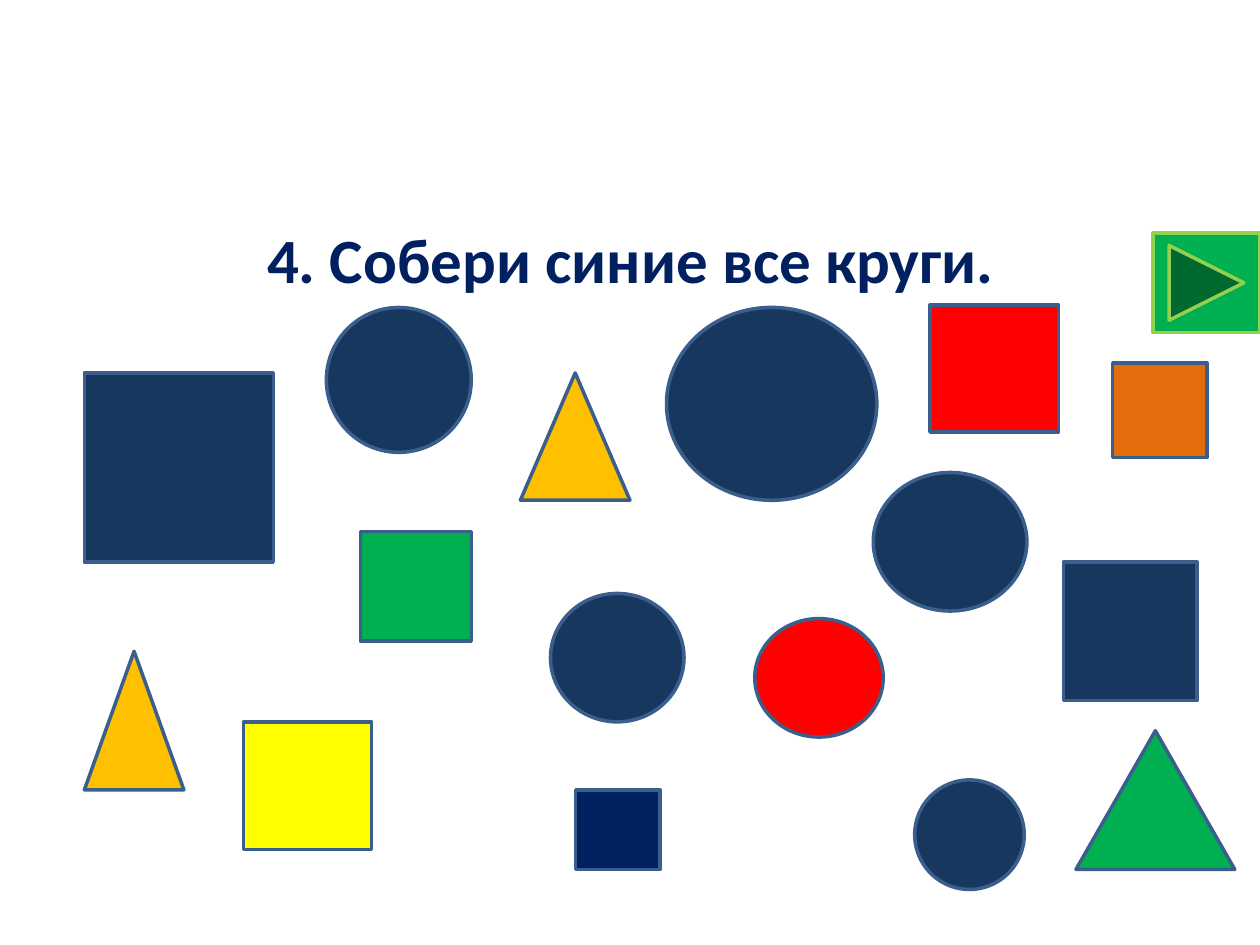
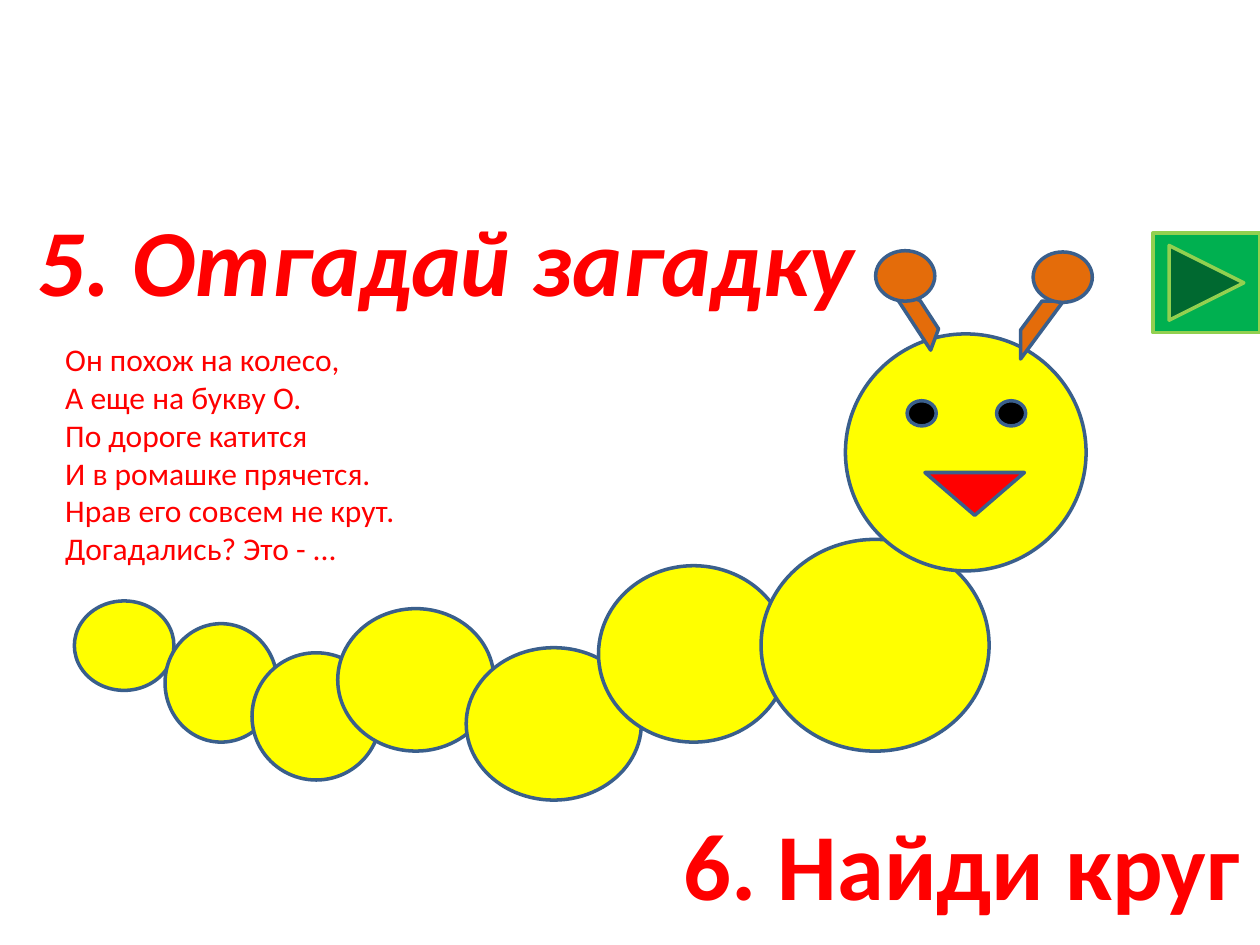
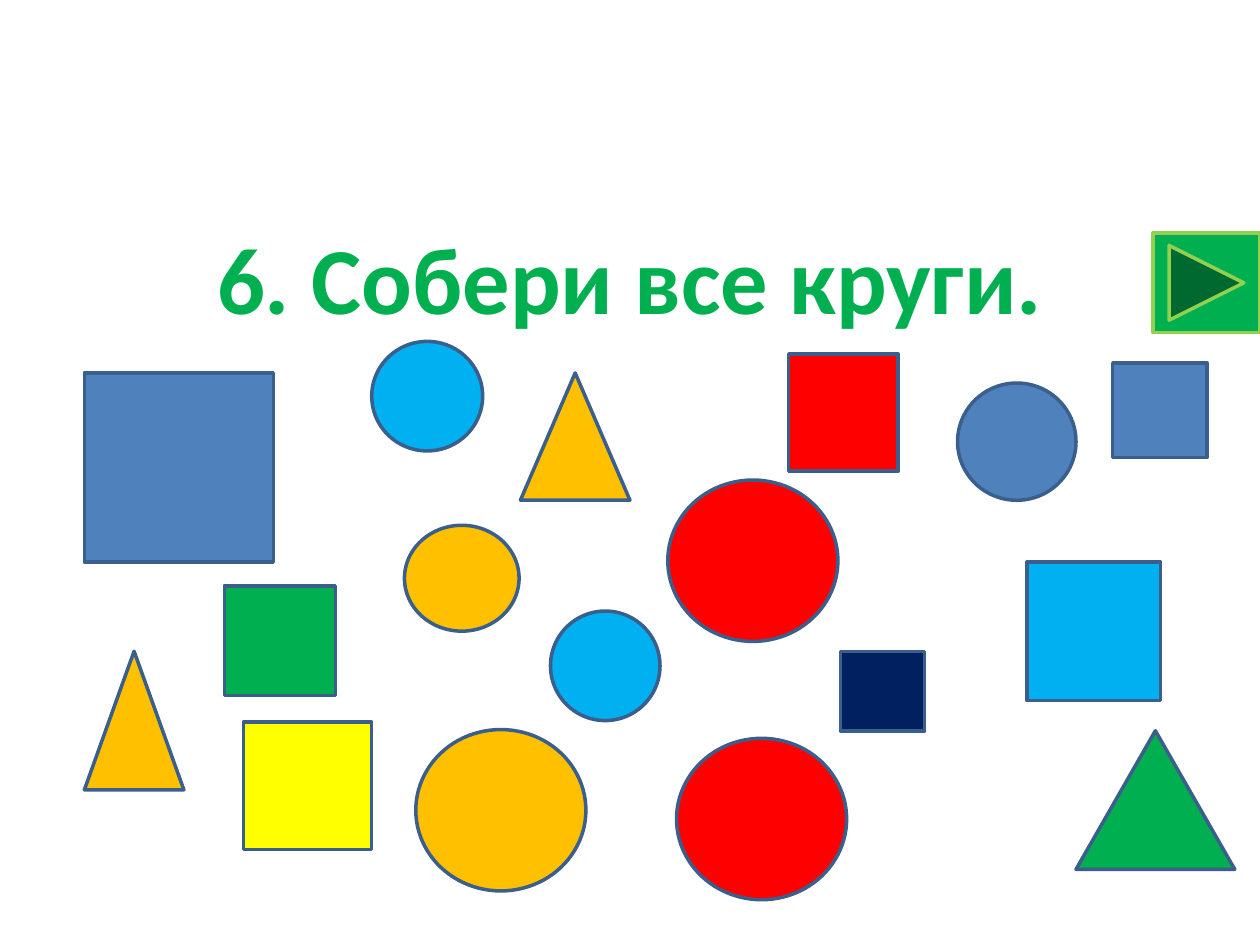
from pptx import Presentation
from pptx.dml.color import RGBColor
from pptx.enum.shapes import MSO_SHAPE
from pptx.enum.text import MSO_AUTO_SIZE, PP_ALIGN
from pptx.util import Pt

SQUARE = MSO_SHAPE.ACTION_BUTTON_CUSTOM
NEXT_BUTTON = MSO_SHAPE.ACTION_BUTTON_FORWARD_OR_NEXT
CIRCLE = MSO_SHAPE.OVAL
TRIANGLE = MSO_SHAPE.ISOSCELES_TRIANGLE
STRIPE = MSO_SHAPE.DIAGONAL_STRIPE
GROW = MSO_AUTO_SIZE.SHAPE_TO_FIT_TEXT
LEFT, CENTER = PP_ALIGN.LEFT, PP_ALIGN.CENTER

BLACK = RGBColor(0x00, 0x00, 0x00)
NAVY = RGBColor(0x00, 0x20, 0x60)
DARK_BLUE = RGBColor(0x17, 0x37, 0x5E)
BLUE = RGBColor(0x4F, 0x81, 0xBD)
SKY = RGBColor(0x00, 0xB0, 0xF0)
GREEN = RGBColor(0x00, 0xB0, 0x50)
LIME = RGBColor(0x92, 0xD0, 0x50)
YELLOW = RGBColor(0xFF, 0xFF, 0x00)
GOLD = RGBColor(0xFF, 0xC0, 0x00)
ORANGE = RGBColor(0xE4, 0x6C, 0x0A)
RED = RGBColor(0xFF, 0x00, 0x00)
OUTLINE = RGBColor(0x3A, 0x5F, 0x8C)

POEM = [
    "Он похож на колесо,",
    "А еще на букву О.",
    "По дороге катится",
    "И в ромашке прячется.",
    "Нрав его совсем не крут.",
    "Догадались? Это - ...",
]

COMMON_FIGURES = [
    (SQUARE, YELLOW, 139, 412.6, 73.4, 72.7),
    (TRIANGLE, GOLD, 48.2, 372.2, 56.9, 79.2),
    (TRIANGLE, GOLD, 297.4, 213.1, 62.6, 72.7),
    (TRIANGLE, GREEN, 614.9, 417.6, 90.7, 79.2),
]
BLUE_CIRCLE_FIGURES = [
    (SQUARE, DARK_BLUE, 48.2, 213.1, 108, 108),
    (SQUARE, GREEN, 205.9, 303.8, 63.4, 62.6),
    (SQUARE, NAVY, 329, 451.4, 48.2, 45.4),
    (SQUARE, RED, 531.4, 174.2, 73.4, 72.7),
    (SQUARE, DARK_BLUE, 607.7, 321.1, 76.3, 79.2),
    (SQUARE, ORANGE, 635.8, 207.4, 54, 54),
    (CIRCLE, DARK_BLUE, 186.5, 175.7, 82.8, 82.8),
    (CIRCLE, DARK_BLUE, 314.6, 339.1, 76.3, 73.4),
    (CIRCLE, RED, 431.3, 353.5, 73.4, 67.7),
    (CIRCLE, DARK_BLUE, 522.7, 445.7, 62.6, 62.6),
    (CIRCLE, DARK_BLUE, 499, 270, 87.8, 79.2),
    (CIRCLE, DARK_BLUE, 380.9, 175.7, 120.2, 110.2),
]
ALL_CIRCLE_FIGURES = [
    (SQUARE, BLUE, 48.2, 213.1, 108, 108),
    (SQUARE, GREEN, 128.2, 334.8, 63.4, 62.6),
    (SQUARE, NAVY, 480.2, 372.2, 48.2, 45.4),
    (SQUARE, RED, 450.7, 202.3, 62.6, 67),
    (SQUARE, SKY, 586.8, 321.1, 76.3, 79.2),
    (SQUARE, BLUE, 635.8, 207.4, 54, 54),
    (CIRCLE, SKY, 212.4, 195.1, 63.4, 62.6),
    (CIRCLE, SKY, 314.6, 349.2, 62.6, 62.6),
    (CIRCLE, BLUE, 547.2, 218.9, 67.7, 67),
    (CIRCLE, RED, 381.6, 274.3, 97.2, 92.2),
    (CIRCLE, RED, 386.6, 421.9, 97.2, 92.2),
    (CIRCLE, GOLD, 237.6, 416.9, 97.2, 92.2),
    (CIRCLE, GOLD, 231.1, 300.2, 65.5, 60.5),
]
CATERPILLAR_BODY = [
    (42.5, 343.4, 56.9, 51.1),
    (94.3, 356.4, 64.1, 67.7),
    (144, 373, 73.4, 72.7),
    (193, 347.8, 89.3, 81.4),
    (266.4, 370.1, 100.1, 87.1),
    (342, 323.3, 108.7, 100.8),
    (434.9, 308.2, 130.3, 121),
    (483.1, 190.8, 137.5, 135.4),
]


class Lesson:
    font_name = "Calibri"
    line_width = Pt(2)

    def __init__(self):
        self.deck = Presentation()
        self.deck.slide_width = Pt(720)
        self.deck.slide_height = Pt(540)
        self.page = None

    def new_page(self):
        self.page = self.deck.slides.add_slide(self.deck.slide_layouts[6])
        self.figure(NEXT_BUTTON, GREEN, 658.8, 133.2, 61.2, 56.9, line=LIME)

    def figure(self, kind, fill, left, top, width, height, line=OUTLINE, rotation=0):
        shape = self.page.shapes.add_shape(
            kind, Pt(left), Pt(top), Pt(width), Pt(height))
        shape.shadow.inherit = False
        shape.fill.solid()
        shape.fill.fore_color.rgb = fill
        shape.line.color.rgb = line
        shape.line.width = self.line_width
        shape.rotation = rotation
        return shape

    def text(self, lines, left, top, width, height, size=54, color=RED,
             bold=True, italic=False, align=CENTER, wrap=False):
        box = self.page.shapes.add_textbox(
            Pt(left), Pt(top), Pt(width), Pt(height))
        frame = box.text_frame
        frame.word_wrap = wrap
        frame.auto_size = GROW
        frame.text = "\n".join(lines)
        for para in frame.paragraphs:
            para.alignment = align
            for span in para.runs:
                span.font.name = self.font_name
                span.font.size = Pt(size)
                span.font.color.rgb = color
                span.font.bold = bold
                span.font.italic = italic

    def collecting_page(self, title, place, figures, **title_format):
        self.new_page()
        self.text([title], *place, **title_format)
        for figure in COMMON_FIGURES + figures:
            self.figure(*figure)

    def caterpillar(self):
        for segment in CATERPILLAR_BODY:
            self.figure(CIRCLE, YELLOW, *segment)
        for eye_left in (518.4, 569.5):
            self.figure(CIRCLE, BLACK, eye_left, 229, 16.6, 14.4)
        self.figure(TRIANGLE, RED, 528.5, 270, 56.9, 24.5, rotation=180)
        self.figure(STRIPE, ORANGE, 583.2, 172.1, 24.5, 33.1)
        left_horn = self.figure(
            STRIPE, ORANGE, 508.3, 166.3, 24.5, 33.1, rotation=110.4)
        left_horn.adjustments[0] = 0.47
        for tip_left, tip_top in ((500.4, 143.3), (590.4, 144)):
            self.figure(CIRCLE, ORANGE, tip_left, tip_top, 33.8, 28.8)

    def riddle_page(self):
        self.new_page()
        self.text(["5. Отгадай загадку"], 14.4, 111.6, 486, 72.7,
                  italic=True, align=LEFT)
        self.text(POEM, 30.2, 190.8, 205.2, 138.2,
                  size=18, bold=False, align=LEFT)
        self.caterpillar()
        self.text(["6. Найди круг"], 382.3, 457.2, 334.8, 72.7, wrap=True)


def main():
    lesson = Lesson()
    lesson.collecting_page("4. Собери синие все круги.", (143.3, 122.4, 434.2, 51.1),
                           BLUE_CIRCLE_FIGURES, size=36, color=NAVY)
    lesson.riddle_page()
    lesson.collecting_page("6. Собери все круги.", (114.5, 122.4, 491, 72.7),
                           ALL_CIRCLE_FIGURES, color=GREEN)
    lesson.deck.save("out.pptx")


if __name__ == "__main__":
    main()
